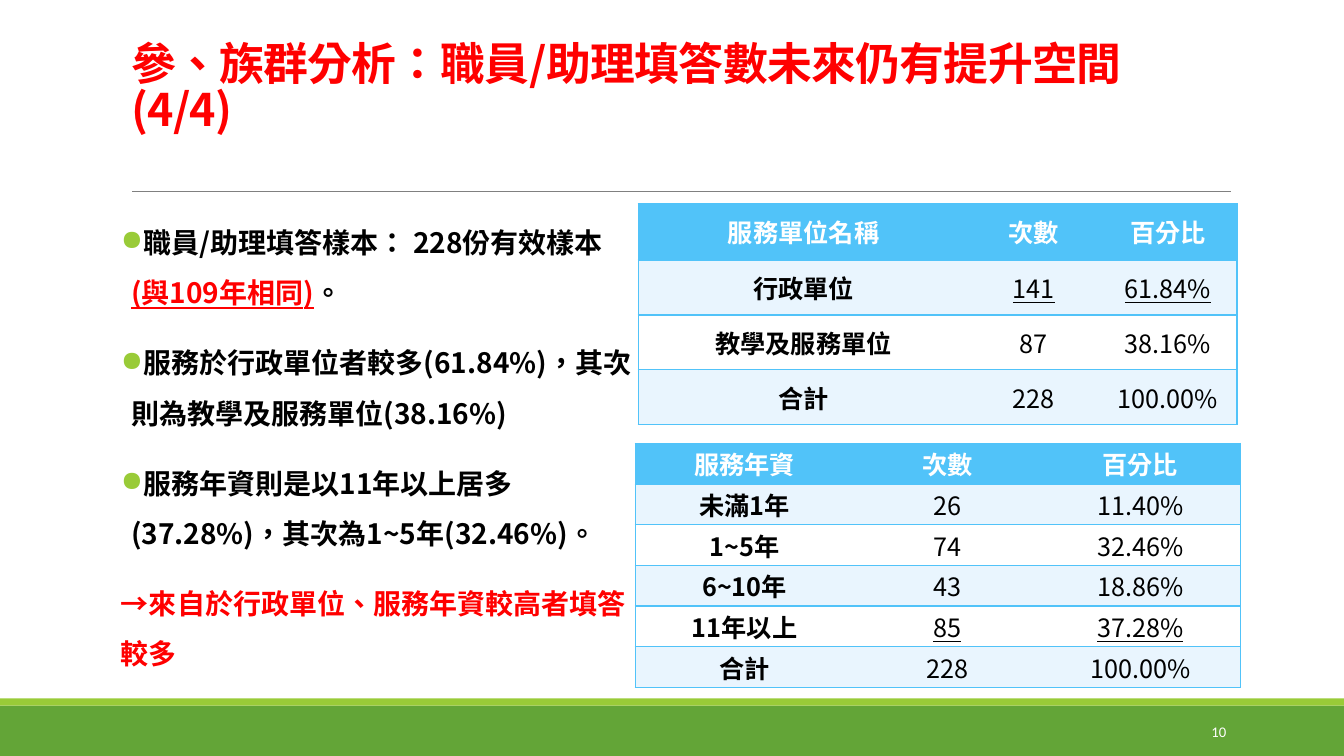
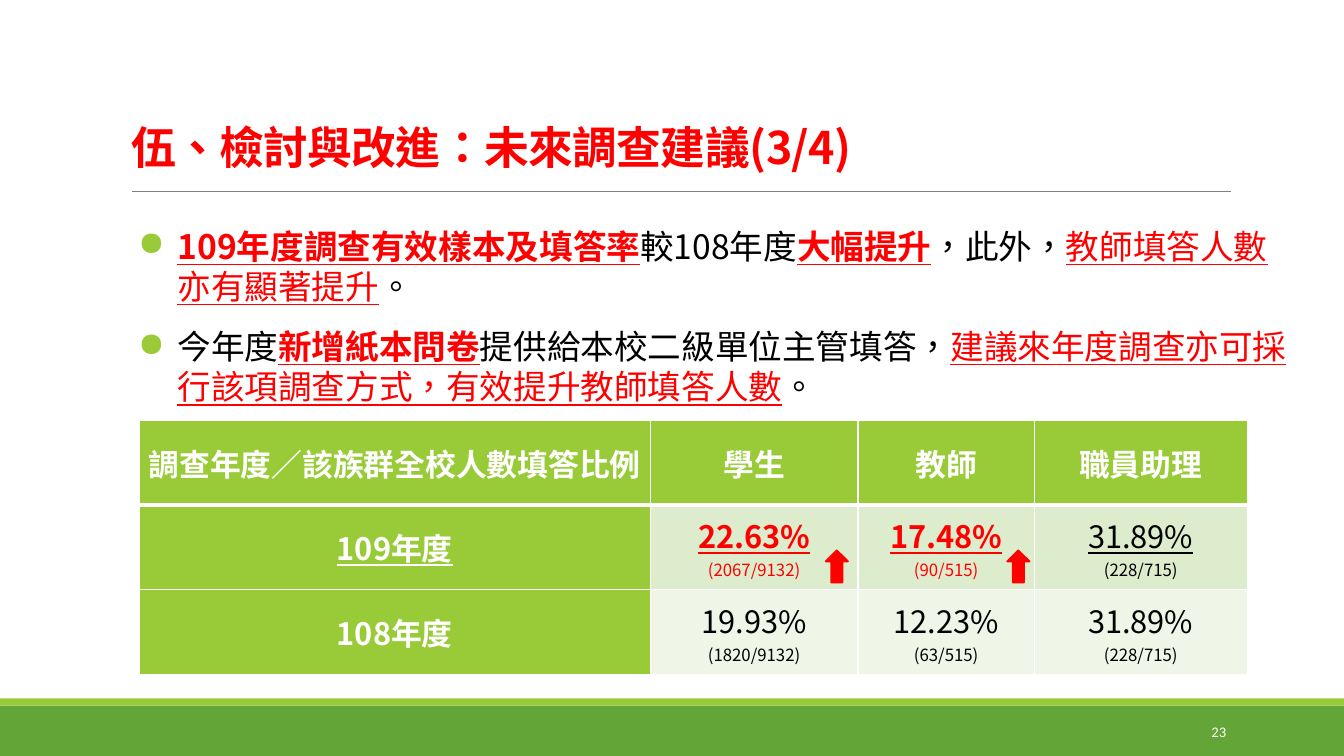
from lxml import etree
from pptx import Presentation
from pptx.dml.color import RGBColor
from pptx.enum import shapes, text
from pptx.oxml.ns import qn
from pptx.util import Inches, Pt

RED = RGBColor(0xFF, 0x00, 0x00)
BLACK = RGBColor(0x00, 0x00, 0x00)
WHITE = RGBColor(0xFF, 0xFF, 0xFF)
GREY = RGBColor(0x80, 0x80, 0x80)
GREEN = RGBColor(0x63, 0xA5, 0x37)
LIME = RGBColor(0x99, 0xCB, 0x38)
LIME_TINT = RGBColor(0xDE, 0xEC, 0xCE)
LIME_PALE = RGBColor(0xEF, 0xF6, 0xE8)
BLUE = RGBColor(0x51, 0xC3, 0xF9)
BLUE_PALE = RGBColor(0xE9, 0xF5, 0xFE)

CJK_FONT = "Noto Sans CJK SC"
NUMBER_FONT = "Calibri"
NO_TABLE_STYLE = "{2D5ABB26-0587-4C30-8999-92F81FD0307C}"
LINE_HEIGHT = 1.2
CENTER = text.PP_ALIGN.CENTER


def add_child(parent, tag, **attributes):
    return etree.SubElement(parent, qn(tag), attributes)


def add_run(paragraph, words, size, color=BLACK, style="", font=CJK_FONT):
    """Style letters: b is bold, u is underlined, r is red."""
    run = paragraph.add_run()
    run.text = words
    run.font.size = Pt(size)
    run.font.name = font
    run.font.bold = "b" in style
    run.font.underline = "u" in style
    run.font.color.rgb = RED if "r" in style else color
    properties = run.font._element
    properties.set("lang", "zh-TW")
    add_child(properties, "a:ea", typeface=font)
    return run


def set_line_pitch(paragraph, size, ratio):
    paragraph.line_spacing = Pt(round(size * LINE_HEIGHT * ratio, 1))


def add_filled_shape(slide, kind, box, color):
    shape = slide.shapes.add_shape(kind, *map(Inches, box))
    shape.shadow.inherit = False
    shape.fill.solid()
    shape.fill.fore_color.rgb = color
    shape.line.fill.background()
    return shape


def decorate_layout(layout, slide):
    """Draw the bands and the title rule, then hand them to the layout."""
    rectangle = shapes.MSO_SHAPE.RECTANGLE
    rule = slide.shapes.add_connector(
        shapes.MSO_CONNECTOR.STRAIGHT,
        Inches(1.31), Inches(1.9), Inches(12.21), Inches(1.9))
    rule.line.color.rgb = GREY
    rule.line.width = Pt(0.5)
    add_child(rule.element.spPr, "a:effectLst")
    bands = [
        add_filled_shape(slide, rectangle, (0, 7, 13.33, 0.5), GREEN),
        add_filled_shape(slide, rectangle, (0, 6.93, 13.33, 0.07), LIME),
    ]
    for position, shape in enumerate(bands + [rule], start=2):
        layout.shapes.element.insert(position, shape.element)


def set_title(slide, words, box):
    title = slide.shapes.title
    title.left, title.top, title.width, title.height = map(Inches, box)
    frame = title.text_frame
    frame.auto_size = text.MSO_AUTO_SIZE.NONE
    frame.vertical_anchor = text.MSO_ANCHOR.BOTTOM
    paragraph = frame.paragraphs[0]
    paragraph.alignment = text.PP_ALIGN.LEFT
    set_line_pitch(paragraph, 32, 0.85)
    run = add_run(paragraph, words, 32, style="br")
    run.font._element.set("spc", "-50")


def add_page_number(slide, number):
    box = slide.shapes.add_textbox(
        Inches(10.83), Inches(7.06), Inches(1.43), Inches(0.4))
    box.text_frame.word_wrap = True
    box.text_frame.vertical_anchor = text.MSO_ANCHOR.MIDDLE
    paragraph = box.text_frame.paragraphs[0]
    paragraph.alignment = text.PP_ALIGN.RIGHT
    add_run(paragraph, str(number), 10.5, WHITE, font=NUMBER_FONT)


def add_bullet(paragraph, indent):
    properties = paragraph._p.get_or_add_pPr()
    properties.set("marL", str(Inches(indent)))
    properties.set("indent", str(-Inches(indent)))
    color = add_child(properties, "a:buClr")
    add_child(color, "a:srgbClr", val=str(LIME))
    add_child(properties, "a:buChar", char="●")


def add_body(slide, box, paragraphs, size, ratio, indent):
    """Each paragraph is (has a bullet, [(words, style), ...])."""
    frame = slide.shapes.add_textbox(*map(Inches, box)).text_frame
    frame.word_wrap = True
    frame.margin_left = frame.margin_right = 0
    for index, (has_bullet, runs) in enumerate(paragraphs):
        paragraph = frame.add_paragraph() if index else frame.paragraphs[0]
        set_line_pitch(paragraph, size, ratio)
        paragraph.space_before = Pt(12) if index else Pt(0)
        paragraph.space_after = Pt(2)
        if has_bullet:
            add_bullet(paragraph, indent)
        for words, style in runs:
            add_run(paragraph, words, size, style=style)


def set_borders(cell, borders):
    """Borders map a side (L, R, T, B) to a colour and a width in points."""
    properties = cell._tc.get_or_add_tcPr()
    for side in "LRTB":
        if side in borders:
            color, width = borders[side]
            line = add_child(properties, "a:ln" + side, w=str(Pt(width)))
            fill = add_child(line, "a:solidFill")
            add_child(fill, "a:srgbClr", val=str(color))


def add_plain_table(slide, left, top, columns, heights):
    frame = slide.shapes.add_table(
        len(heights), len(columns), Inches(left), Inches(top),
        Inches(sum(columns)), Inches(sum(heights)))
    for style in frame.element.iter(qn("a:tableStyleId")):
        style.text = NO_TABLE_STYLE
    table = frame.table
    for column, width in zip(table.columns, columns):
        column.width = Inches(width)
    for row, height in zip(table.rows, heights):
        row.height = Inches(height)
    return table


def fill_cell(cell, lines, fill, borders, color):
    """Each line is (words, size, style)."""
    set_borders(cell, borders)
    cell.fill.solid()
    cell.fill.fore_color.rgb = fill
    cell.vertical_anchor = text.MSO_ANCHOR.MIDDLE
    cell.margin_left = cell.margin_right = Inches(0.02)
    cell.margin_top = cell.margin_bottom = 0
    for index, (words, size, style) in enumerate(lines):
        frame = cell.text_frame
        paragraph = frame.add_paragraph() if index else frame.paragraphs[0]
        paragraph.alignment = CENTER
        add_run(paragraph, words, size, color, style)


def add_count_table(slide, left, top, columns, heights, rows, top_row):
    """Blue table of counts; the figures in top_row are underlined."""
    table = add_plain_table(slide, left, top, columns, heights)
    edge = (BLUE, 1)
    last = len(columns) - 1
    for r, row in enumerate(rows):
        fill = BLUE if r == 0 else BLUE_PALE if r % 2 else WHITE
        for c, words in enumerate(row):
            borders = {"T": edge, "B": edge}
            if c in (0, last):
                borders["L" if c == 0 else "R"] = edge
            style = "b" if r == 0 or c == 0 else "u" if r == top_row else ""
            fill_cell(table.cell(r, c), [(words, 18, style)], fill, borders,
                      BLACK if r else WHITE)


def add_rate_table(slide, left, top, columns, row_height, header, rows):
    """Each row is (year, style, [(rate, count, rate style, count style)])."""
    table = add_plain_table(slide, left, top, columns,
                            [row_height] * (len(rows) + 1))
    borders = dict.fromkeys("LRTB", (WHITE, 1))
    thick = (WHITE, 3)
    for c, words in enumerate(header):
        fill_cell(table.cell(0, c), [(words, 22, "b")], LIME,
                  {**borders, "B": thick}, WHITE)
    for r, (year, year_style, rates) in enumerate(rows, start=1):
        edges = {**borders, "T": thick} if r == 1 else borders
        fill_cell(table.cell(r, 0), [(year, 22, year_style)], LIME, edges,
                  WHITE)
        for c, (rate, count, rate_style, count_style) in enumerate(rates, 1):
            fill_cell(table.cell(r, c),
                      [(rate, 22, rate_style), (count, 12, count_style)],
                      LIME_TINT if r % 2 else LIME_PALE, edges, BLACK)


def add_rise_arrow(slide, left, top):
    arrow = add_filled_shape(slide, shapes.MSO_SHAPE.UP_ARROW,
                             (left, top, 0.22, 0.32), RED)
    arrow.line.color.rgb = RED
    arrow.line.width = Pt(1.25)


def build_staff_slide(slide):
    set_title(slide, "參、族群分析：職員/助理填答數未來仍有提升空間(4/4)",
              (1.2, 0.66, 11, 0.73))
    add_body(slide, (1.2, 2.02, 5.07, 4.4), [
        (True, [("職員/助理填答樣本： 228份有效樣本", "b"),
                ("(與109年相同)", "bru"), ("。", "b")]),
        (True, [("服務於行政單位者較多(61.84%)，其次則為教學及服務單位(38.16%)",
                 "b")]),
        (True, [("服務年資則是以11年以上居多(37.28%)，其次為1~5年(32.46%)。",
                 "b")]),
        (False, [("→來自於行政單位、服務年資較高者填答較多", "br")]),
    ], size=20, ratio=1.5, indent=0.1)
    add_count_table(slide, 6.33, 2.02, [3.28, 1.29, 1.37],
                    [0.56] + [0.545] * 3, [
        ("服務單位名稱", "次數", "百分比"),
        ("行政單位", "141", "61.84%"),
        ("教學及服務單位", "87", "38.16%"),
        ("合計", "228", "100.00%"),
    ], top_row=1)
    add_count_table(slide, 6.3, 4.4, [2.17, 1.85, 1.98], [2.42 / 6] * 6, [
        ("服務年資", "次數", "百分比"),
        ("未滿1年", "26", "11.40%"),
        ("1~5年", "74", "32.46%"),
        ("6~10年", "43", "18.86%"),
        ("11年以上", "85", "37.28%"),
        ("合計", "228", "100.00%"),
    ], top_row=4)
    add_page_number(slide, 10)


def build_suggestion_slide(slide):
    set_title(slide, "伍、檢討與改進：未來調查建議(3/4)",
              (1.2, 0.48, 10.45, 1.29))
    add_rate_table(slide, 1.38, 4.17, [5.07, 2.06, 1.75, 2.11], 0.84,
                   ("調查年度／該族群全校人數填答比例", "學生", "教師", "職員助理"), [
        ("109年度", "bu", [("22.63%", "(2067/9132)", "bru", "r"),
                          ("17.48%", "(90/515)", "bru", "r"),
                          ("31.89%", "(228/715)", "u", "")]),
        ("108年度", "b", [("19.93%", "(1820/9132)", "", ""),
                         ("12.23%", "(63/515)", "", ""),
                         ("31.89%", "(228/715)", "", "")]),
    ])
    add_body(slide, (1.37, 2.19, 11.46, 1.9), [
        (True, [("109年度調查有效樣本及填答率", "bru"), ("較108年度", ""),
                ("大幅提升", "bru"), ("，此外，", ""),
                ("教師填答人數亦有顯著提升", "ru"), ("。", "")]),
        (True, [("今年度", ""), ("新增紙本問卷", "bru"),
                ("提供給本校二級單位主管填答，", ""),
                ("建議來年度調查亦可採行該項調查方式，有效提升教師填答人數", "ru"),
                ("。", "")]),
    ], size=24, ratio=1, indent=0.39)
    for left in (8.19, 9.99):
        add_rise_arrow(slide, left, 5.46)
    add_page_number(slide, 23)


def main():
    presentation = Presentation()
    presentation.slide_width = Inches(13.33)
    presentation.slide_height = Inches(7.5)
    layout = presentation.slide_layouts[5]
    slides = [presentation.slides.add_slide(layout) for _ in range(2)]
    decorate_layout(layout, slides[0])
    build_staff_slide(slides[0])
    build_suggestion_slide(slides[1])
    presentation.save("out.pptx")


if __name__ == "__main__":
    main()
